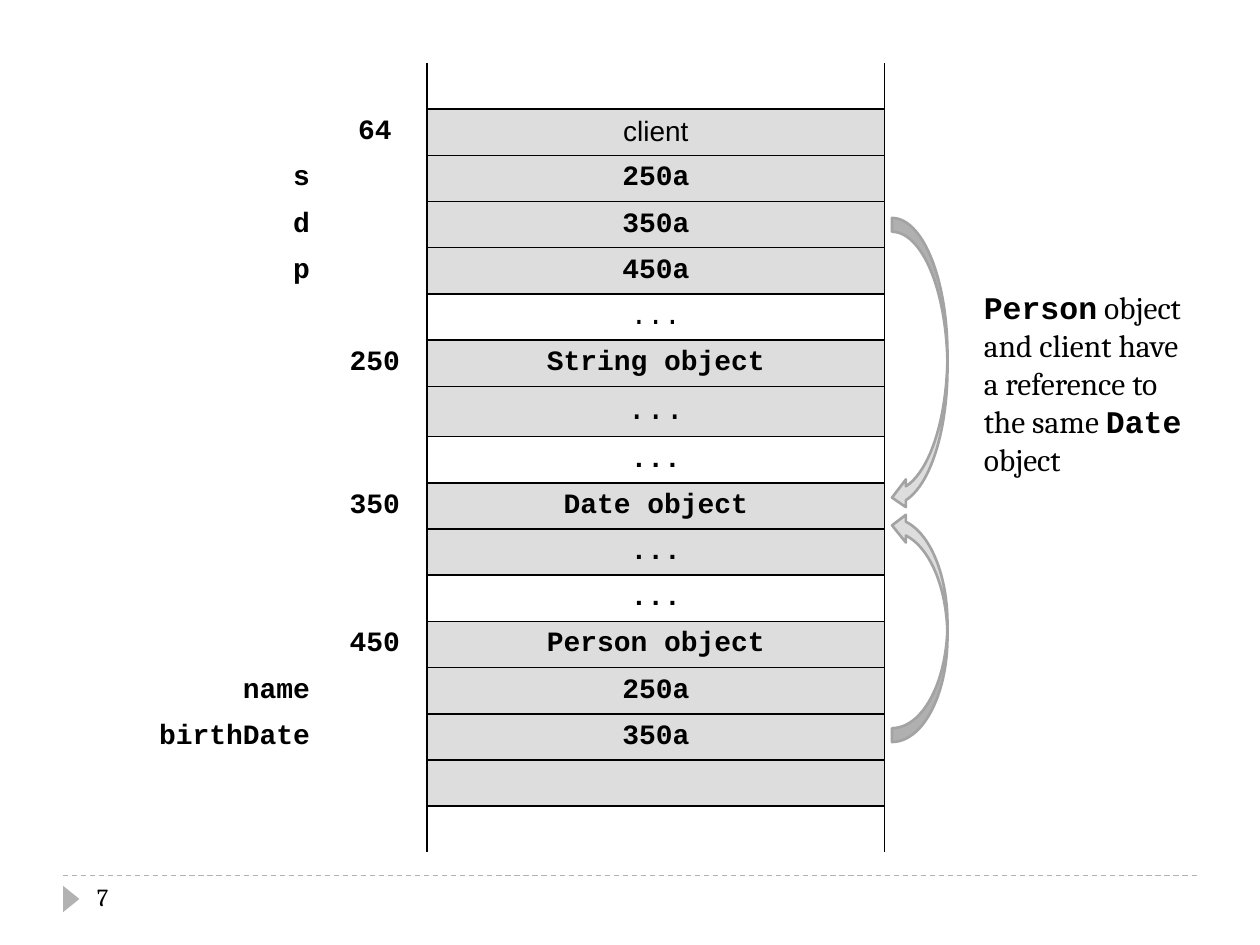
"""Build a memory diagram slide with object references."""
from lxml.etree import SubElement
from pptx import Presentation
from pptx.dml.color import RGBColor
from pptx.enum.dml import MSO_LINE
from pptx.enum.shapes import MSO_CONNECTOR, MSO_SHAPE
from pptx.enum.text import MSO_ANCHOR, PP_ALIGN
from pptx.oxml.ns import qn
from pptx.util import Inches, Pt

COLORS = {name: RGBColor.from_string(code) for name, code in {
    "ink": "000000", "cell": "DDDDDD", "edge": "A3A3A3", "rule": "B2B2B2"}.items()}
MONO = "Courier New"
PLAIN = "No fill"
ROWS = [
    ("", "", "", False),
    ("", "64", "client", True),
    ("s", "", "250a", True),
    ("d", "", "350a", True),
    ("p", "", "450a", True),
    ("", "", "...", False),
    ("", "250", "String object", True),
    ("", "", "...", True),
    ("", "", "...", False),
    ("", "350", "Date object", True),
    ("", "", "...", True),
    ("", "", "...", False),
    ("", "450", "Person object", True),
    ("name", "", "250a", True),
    ("birthDate", "", "350a", True),
    ("", "", "", True),
    ("", "", "", False),
]
TALL = 7
LIGHT = (1, 5, TALL)


def style(font, size, name, bold=False):
    font.size, font.name, font.bold = Pt(size), name, bold
    font.color.rgb = COLORS["ink"]


def border(cell, sides):
    props = cell._tc.get_or_add_tcPr()
    for side in sides:
        line = SubElement(props, qn("a:ln" + side), w=str(Pt(1)))
        fill = SubElement(line, qn("a:solidFill"))
        SubElement(fill, qn("a:srgbClr"), val=str(COLORS["ink"]))


deck = Presentation()
deck.slide_width, deck.slide_height = Inches(10), Inches(7.5)
slide = deck.slides.add_slide(deck.slide_layouts[6])
shapes = slide.shapes

rule = shapes.add_connector(
    MSO_CONNECTOR.STRAIGHT, Inches(0.5), Inches(6.95), Inches(9.5), Inches(6.95))
rule.line.color.rgb = COLORS["rule"]
rule.line.width = Pt(0.75)
rule.line.dash_style = MSO_LINE.DASH
SubElement(rule._element.spPr, qn("a:effectLst"))

mark = shapes.add_shape(
    MSO_SHAPE.ISOSCELES_TRIANGLE, Inches(0.46), Inches(7.07), Inches(0.21), Inches(0.13))
mark.rotation = 90
mark.shadow.inherit = False
mark.fill.solid()
mark.fill.fore_color.rgb = COLORS["rule"]
mark.line.fill.background()

page = shapes.add_textbox(Inches(0.67), Inches(6.95), Inches(2.17), Inches(0.4))
page.text_frame.word_wrap = True
page.text_frame.text = "7"
style(page.text_frame.paragraphs[0].font, 14, "Cambria")

frame = shapes.add_table(
    len(ROWS), 3, Inches(0.28), Inches(0.5), Inches(6.74), Inches(6.27))
table = frame.table
table.first_row = table.horz_banding = False
table._tbl.tblPr.find(qn("a:tableStyleId")).text = "{2D5ABB26-0587-4C30-8999-92F81FD0307C}"
for col, width in zip(table.columns, (2.28, 0.83, 3.63)):
    col.width = Inches(width)

aligns = (PP_ALIGN.RIGHT, PP_ALIGN.CENTER, PP_ALIGN.CENTER)
last = len(ROWS) - 1
for i, (*texts, shaded) in enumerate(ROWS):
    table.rows[i].height = Inches(0.4 if i == TALL else 5.87 / last)
    for j, text in enumerate(texts):
        cell = table.cell(i, j)
        cell.margin_top = cell.margin_bottom = Inches(0.02)
        cell.vertical_anchor = MSO_ANCHOR.MIDDLE
        cell.text = text
        para = cell.text_frame.paragraphs[0]
        para.alignment = aligns[j]
        value = j == 2
        style(para.font, 18 if value and i == TALL else 16,
              "Arial" if text == "client" else MONO, not (value and i in LIGHT))
        if value:
            border(cell, "LR" + "T" * (i > 0) + "B" * (i < last))
        elif j == 1:
            border(cell, "R")
        if value and shaded:
            cell.fill.solid()
            cell.fill.fore_color.rgb = COLORS["cell"]
        else:
            cell.fill.background()

for top, height, flip in ((1.73, 2.33, False), (4.06, 1.83, True)):
    arrow = shapes.add_shape(
        MSO_SHAPE.CURVED_LEFT_ARROW, Inches(7.08), Inches(top), Inches(0.44), Inches(height))
    arrow.shadow.inherit = False
    arrow.fill.solid()
    arrow.fill.fore_color.rgb = COLORS["cell"]
    arrow.line.color.rgb = COLORS["edge"]
    arrow.line.width = Pt(1.5)
    if flip:
        arrow._element.spPr.xfrm.set("flipV", "1")

note = shapes.add_textbox(Inches(7.71), Inches(2.24), Inches(1.84), Inches(1.62))
note.text_frame.word_wrap = False
lines = (("Person", " object"), ("and client have",), ("a reference to",),
         ("the same ", "Date"), ("object",))
for i, parts in enumerate(lines):
    para = note.text_frame.add_paragraph() if i else note.text_frame.paragraphs[0]
    for part in parts:
        run = para.add_run()
        run.text = part
        code = part in ("Person", "Date")
        style(run.font, 18, MONO if code else "Cambria", code)

deck.save("out.pptx")
